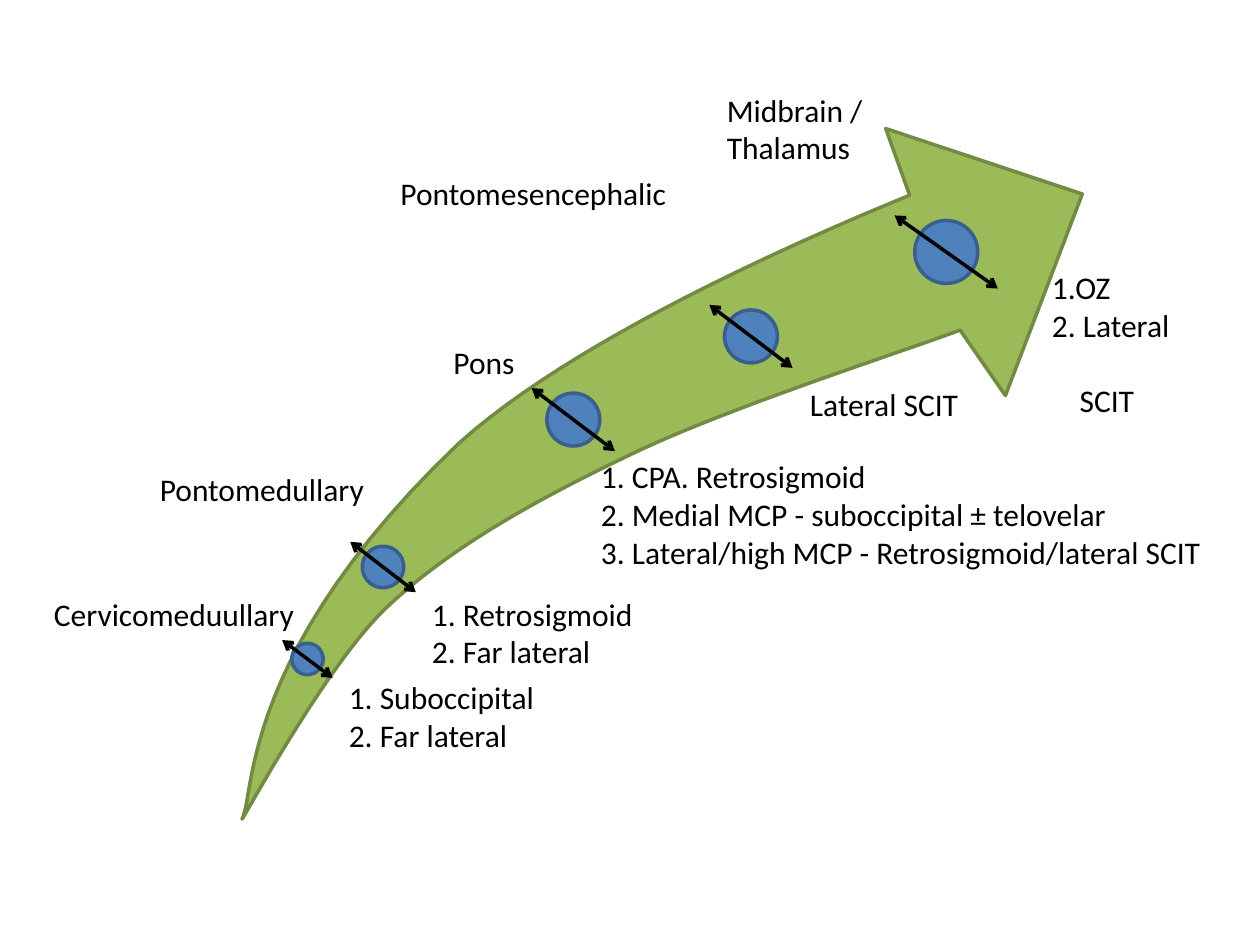
from math import atan2, degrees

from lxml.etree import SubElement
from pptx import Presentation
from pptx.dml.color import RGBColor
from pptx.enum.shapes import MSO_CONNECTOR as Connector, MSO_SHAPE as Shape
from pptx.enum.text import MSO_AUTO_SIZE as AutoSize
from pptx.oxml.ns import qn
from pptx.util import Inches, Pt

TIP = (1.93, 6.48)
UPPER_EDGE = [
    ((2.02, 6.26), (1.94, 5.14), (3.64, 3.52)),
    ((4.55, 2.7), (6.29, 1.93), (7.22, 1.55)),
]
ARROWHEAD = [(7.03, 1.02), (8.59, 1.54), (7.98, 3.14), (7.62, 2.62)]
LOWER_EDGE = [
    ((7.17, 2.79), (5.76, 3.24), (5, 3.61)),
    ((4.25, 3.97), (3.58, 4.34), (3.07, 4.82)),
    ((2.56, 5.3), (1.83, 6.69), TIP),
]

LABELS = [
    (5.67, 0.67, 1.67, 0.71, "Midbrain /\vThalamus"),
    (3.08, 1.33, 2.33, 0.4, "Pontomesencephalic"),
    (8.25, 2.08, 1.17, 1.01, "1.OZ\v2. Lateral\nSCIT"),
    (6.33, 3.01, 1.58, 0.4, "Lateral SCIT"),
    (4.67, 3.58, 6.25, 1.01,
     "1. CPA. Retrosigmoid\v2. Medial MCP - suboccipital ± telovelar\v"
     "3. Lateral/high MCP - Retrosigmoid/lateral SCIT"),
    (3.5, 2.67, 0.75, 0.4, "Pons"),
    (1.17, 3.68, 2.33, 0.4, "Pontomedullary"),
    (3.33, 4.67, 5, 0.71, "1. Retrosigmoid\v2. Far lateral"),
    (2.67, 5.33, 5, 0.71, "1. Suboccipital\v2. Far lateral"),
    (0.33, 4.67, 2.17, 0.4, "Cervicomeduullary"),
]

LESIONS = [
    (7.51, 2, 0.5, 0.41, 0.29),
    (5.96, 2.67, 0.42, 0.33, 0.25),
    (4.55, 3.33, 0.42, 0.33, 0.25),
    (3.04, 4.5, 0.33, 0.26, 0.2),
    (2.44, 5.23, 0.25, 0.2, 0.15),
]


def color(value):
    return RGBColor.from_string(value)


def curve_points(start, segments, steps=24):
    points = []
    for first, second, end in segments:
        for step in range(1, steps + 1):
            t = step / steps
            u = 1 - t
            points.append(tuple(
                u**3 * a + 3 * u * u * t * b + 3 * u * t * t * c + t**3 * d
                for a, b, c, d in zip(start, first, second, end)))
        start = end
    return points


class Diagram:
    font = "Calibri"
    size = Pt(18)
    text_color = "000000"
    stroke = Pt(2)

    def __init__(self, slide):
        self.slide = slide

    def paint(self, shape, fill, line):
        shape.shadow.inherit = False
        shape.fill.solid()
        shape.fill.fore_color.rgb = color(fill)
        shape.line.color.rgb = color(line)
        shape.line.width = self.stroke

    def outline(self, points, fill, line):
        scaled = [(Inches(x), Inches(y)) for x, y in points]
        builder = self.slide.shapes.build_freeform(*scaled[0])
        builder.add_line_segments(scaled[1:], close=True)
        self.paint(builder.convert_to_shape(), fill, line)

    def label(self, left, top, width, height, text):
        box = self.slide.shapes.add_textbox(
            Inches(left), Inches(top), Inches(width), Inches(height))
        frame = box.text_frame
        frame.word_wrap = True
        frame.auto_size = AutoSize.SHAPE_TO_FIT_TEXT
        frame.text = text
        for paragraph in frame.paragraphs:
            for run in paragraph.runs:
                run.font.name = self.font
                run.font.size = self.size
                run.font.color.rgb = color(self.text_color)
        for paragraph in frame.paragraphs[1:]:
            paragraph.space_before = Pt(21.5)
            paragraph._p.get_or_add_pPr().set("marL", str(Inches(0.22)))

    def lesion(self, x, y, diameter, reach_x, reach_y):
        group = self.slide.shapes.add_group_shape()
        circle = group.shapes.add_shape(
            Shape.OVAL, Inches(x - diameter / 2), Inches(y - diameter / 2),
            Inches(diameter), Inches(diameter))
        circle.rotation = degrees(atan2(reach_y, reach_x))
        self.paint(circle, "4F81BD", "3A5F8C")
        arrow = group.shapes.add_connector(
            Connector.STRAIGHT, Inches(x - reach_x), Inches(y - reach_y),
            Inches(x + reach_x), Inches(y + reach_y))
        arrow.line.color.rgb = color("000000")
        arrow.line.width = self.stroke
        properties = arrow._element.spPr
        line = properties.find(qn("a:ln"))
        for end in ("a:headEnd", "a:tailEnd"):
            SubElement(line, qn(end), type="arrow")
        SubElement(properties, qn("a:effectLst"))


def main():
    presentation = Presentation()
    presentation.slide_width = Inches(10)
    presentation.slide_height = Inches(7.5)
    diagram = Diagram(
        presentation.slides.add_slide(presentation.slide_layouts[6]))

    brainstem = [TIP, *curve_points(TIP, UPPER_EDGE), *ARROWHEAD,
                 *curve_points(ARROWHEAD[-1], LOWER_EDGE)]
    diagram.outline(brainstem, "9BBB59", "738A42")
    for label in LABELS:
        diagram.label(*label)
    for lesion in LESIONS:
        diagram.lesion(*lesion)
    presentation.save("out.pptx")


if __name__ == "__main__":
    main()
